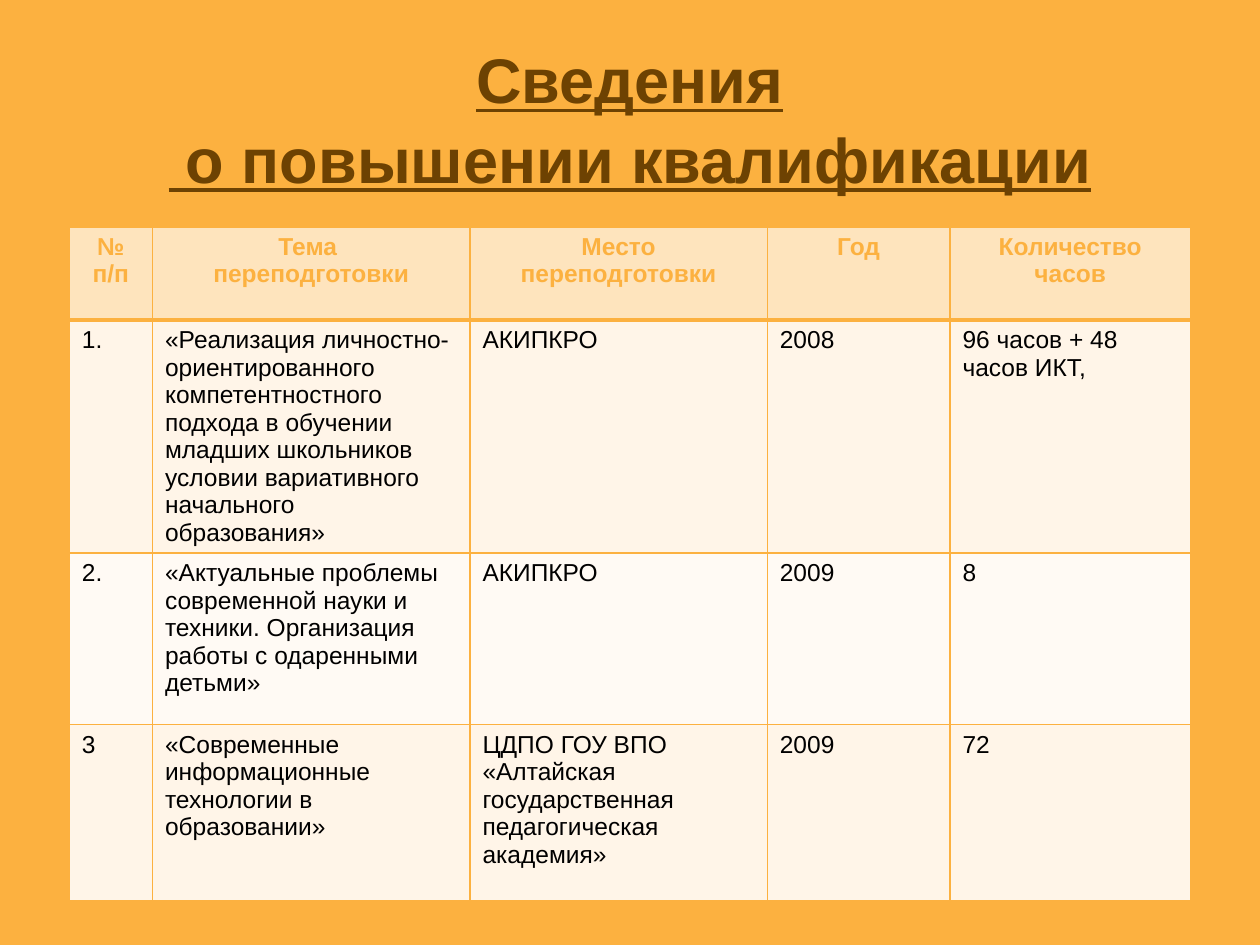
from dataclasses import dataclass

from lxml.etree import SubElement
from pptx import Presentation
from pptx.dml.color import RGBColor as RGB
from pptx.enum.text import MSO_ANCHOR as ANCHOR, PP_ALIGN as ALIGN
from pptx.oxml.ns import qn
from pptx.util import Inches, Pt


@dataclass(frozen=True)
class Theme:
    font: str = "Arial"
    accent: str = "FCB140"
    title: str = "6D4202"
    body: str = "000000"
    header_fill: str = "FEE4BD"
    odd_fill: str = "FFF5E8"
    even_fill: str = "FFFAF4"
    title_size: int = 36
    cell_size: int = 14
    line: int = 1
    header_line: int = 3


THEME = Theme()
TITLE = "Сведения\v о повышении квалификации"
COLUMNS = [0.66, 2.52, 2.36, 1.45, 1.91]
ROWS = [0.74, 1.85, 1.36, 1.4]
CELLS = [
    ["№\nп/п", "Тема \nпереподготовки", "Место\nпереподготовки", "Год",
     "Количество\nчасов"],
    ["1.", "«Реализация личностно-ориентированного компетентностного подхода "
     "в обучении младших школьников условии вариативного начального "
     "образования»", "АКИПКРО", "2008", "96 часов + 48 часов ИКТ,"],
    ["2.", "«Актуальные проблемы современной науки и техники. Организация "
     "работы с одаренными детьми»", "АКИПКРО", "2009", "8"],
    ["3", "«Современные информационные технологии в образовании»",
     "ЦДПО ГОУ ВПО «Алтайская государственная педагогическая академия»",
     "2009", "72"],
]


def write(tf, text, size, color, bold=False, underline=False,
          align=ALIGN.LEFT, spacing=None):
    tf.word_wrap = True
    tf.text = text
    for p in tf.paragraphs:
        p.alignment = align
        p.line_spacing = spacing
        for font in [p.font] + [r.font for r in p.runs]:
            font.name = THEME.font
            font.size = Pt(size)
            font.bold = bold
            font.underline = underline
            font.color.rgb = RGB.from_string(color)


def set_borders(cell, color, **widths):
    props = cell._tc.get_or_add_tcPr()
    for i, side in enumerate("LRTB"):
        ln = props.makeelement(qn(f"a:ln{side}"),
                               {"w": str(Pt(widths[side]))})
        fill = SubElement(ln, qn("a:solidFill"))
        SubElement(fill, qn("a:srgbClr"), val=color)
        props.insert(i, ln)


def add_title(s, text):
    sp = s.shapes.title
    sp.left, sp.top = Inches(0.5), Inches(0.3)
    sp.width, sp.height = Inches(9), Inches(1.25)
    sp.text_frame.vertical_anchor = ANCHOR.MIDDLE
    write(sp.text_frame, text, THEME.title_size, THEME.title, bold=True,
          underline=True, align=ALIGN.CENTER, spacing=1.05)


def format_cell(cell, text, row):
    header = row == 0
    if header:
        fill = THEME.header_fill
    else:
        fill = THEME.odd_fill if row % 2 else THEME.even_fill
    cell.fill.solid()
    cell.fill.fore_color.rgb = RGB.from_string(fill)
    set_borders(cell, THEME.accent, L=THEME.line, R=THEME.line,
                T=THEME.header_line if row == 1 else THEME.line,
                B=THEME.header_line if header else THEME.line)
    write(cell.text_frame, text, THEME.cell_size,
          THEME.accent if header else THEME.body, bold=header,
          align=ALIGN.CENTER if header else ALIGN.LEFT)


def add_training_table(s, cells):
    table = s.shapes.add_table(
        len(ROWS), len(COLUMNS), Inches(0.55), Inches(1.8),
        Inches(sum(COLUMNS)), Inches(sum(ROWS))).table
    for column, width in zip(table.columns, COLUMNS):
        column.width = Inches(width)
    for i, height in enumerate(ROWS):
        table.rows[i].height = Inches(height)
        for j, text in enumerate(cells[i]):
            format_cell(table.cell(i, j), text, i)


def main():
    prs = Presentation()
    prs.slide_width, prs.slide_height = Inches(10), Inches(7.5)
    s = prs.slides.add_slide(prs.slide_layouts[5])
    s.background.fill.solid()
    s.background.fill.fore_color.rgb = RGB.from_string(THEME.accent)
    add_title(s, TITLE)
    add_training_table(s, CELLS)
    prs.save("out.pptx")


if __name__ == "__main__":
    main()
